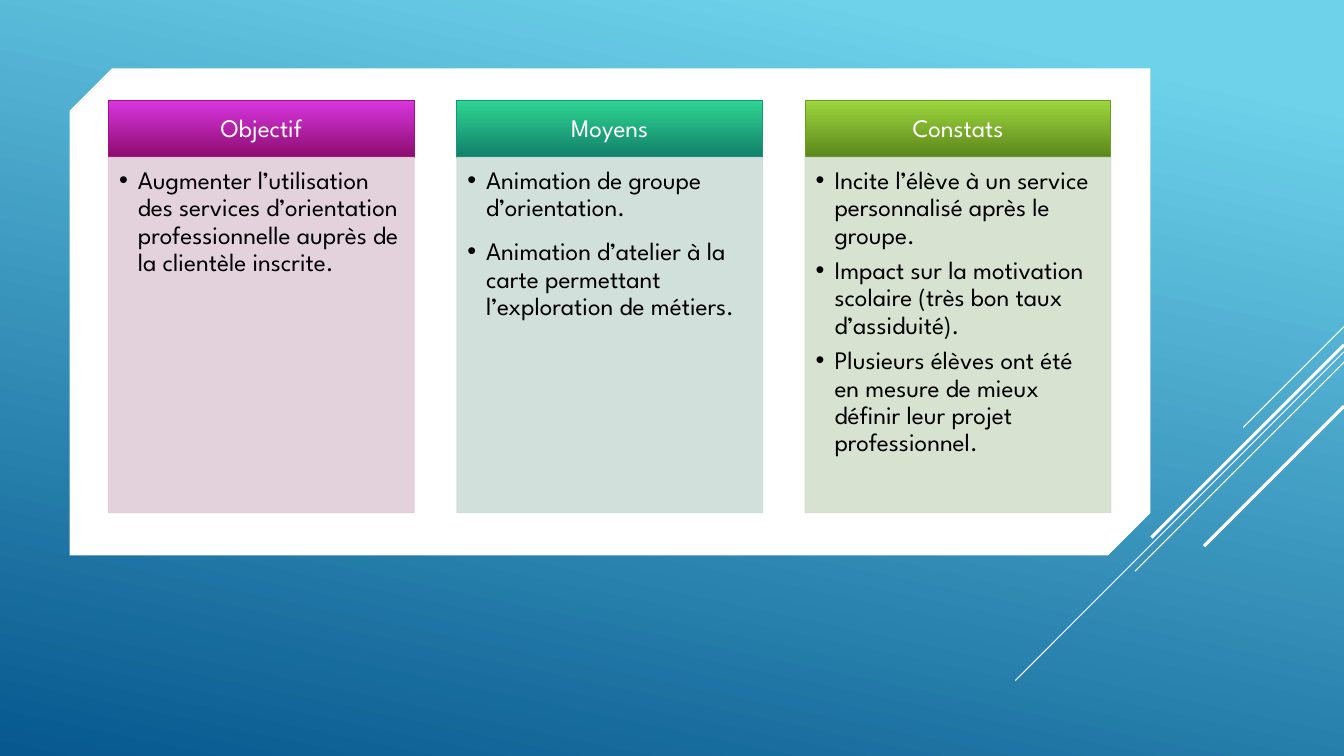
from dataclasses import dataclass

from lxml.etree import SubElement
from pptx import Presentation
from pptx.dml.color import RGBColor
from pptx.enum.shapes import MSO_CONNECTOR as Connector, MSO_SHAPE as Shape
from pptx.enum.text import MSO_ANCHOR as Anchor, MSO_AUTO_SIZE as AutoSize, PP_ALIGN as Align
from pptx.oxml.ns import qn
from pptx.util import Pt


@dataclass(frozen=True)
class Theme:
    font: str = "League Spartan"
    text_size: float = 18
    line_spacing: float = 0.9
    outline: float = 0.75
    white: str = "FFFFFF"
    black: str = "000000"
    sky: tuple = ("6ED2EB", "06588E")
    magenta: tuple = ("D835DF", "8D0C6F", "A50E82", "E1CCD8")
    teal: tuple = ("2ED592", "11806A", "14967C", "CCDDD7")
    green: tuple = ("9DD63D", "5B871B", "6A9E1F", "D4DFCD")


class SlideBuilder:
    def __init__(self, page, theme):
        self.page = page
        self.theme = theme

    def gradient(self, fill, colours, angle, start=0):
        fill.gradient()
        fill.gradient_angle = 360 - angle
        for stop, colour, position in zip(fill.gradient_stops, colours, (start, 1)):
            stop.color.rgb = RGBColor.from_string(colour)
            stop.position = position

    def solid(self, fill, colour, opacity=None):
        fill.solid()
        fill.fore_color.rgb = RGBColor.from_string(colour)
        if opacity:
            for element in fill._xPr.iter(qn("a:srgbClr")):
                SubElement(element, qn("a:alpha"), val=str(opacity * 1000))

    def background(self):
        self.gradient(self.page.background.fill, self.theme.sky, 102, 0.1)

    def panel(self, left, top, width, height, snip):
        box = self.page.shapes.add_shape(
            Shape.SNIP_2_DIAG_RECTANGLE, Pt(left), Pt(top), Pt(width), Pt(height))
        box.shadow.inherit = False
        box.adjustments[0] = snip
        box.adjustments[1] = 0
        self.solid(box.fill, self.theme.white)
        box.line.fill.background()

    def diagonal(self, top, length, weight, right=960):
        line = self.page.shapes.add_connector(
            Connector.STRAIGHT, Pt(right), Pt(top), Pt(right - length), Pt(top + length))
        self.solid(line.line.fill, self.theme.white)
        line.line.width = Pt(weight)
        SubElement(line.element.spPr, qn("a:effectLst"))

    def frame(self, box, insets, anchor):
        frame = box.text_frame
        frame.word_wrap = True
        frame.auto_size = AutoSize.NONE
        frame.vertical_anchor = anchor
        (frame.margin_left, frame.margin_top,
         frame.margin_right, frame.margin_bottom) = map(Pt, insets)
        return frame

    def format_paragraph(self, para, colour, align, gap=0):
        para.alignment = align
        para.line_spacing = self.theme.line_spacing
        para.space_before = Pt(0)
        para.space_after = Pt(gap)
        for span in para.runs:
            span.font.name = self.theme.font
            span.font.size = Pt(self.theme.text_size)
            span.font.bold = False
            span.font.color.rgb = RGBColor.from_string(colour)

    def heading(self, text, colours, left, top, width, height):
        box = self.page.shapes.add_shape(
            Shape.RECTANGLE, Pt(left), Pt(top), Pt(width), Pt(height))
        box.shadow.inherit = False
        self.gradient(box.fill, colours[:2], 90)
        self.solid(box.line.fill, colours[2])
        box.line.width = Pt(self.theme.outline)
        frame = self.frame(box, (10, 5.7, 10, 5.7), Anchor.MIDDLE)
        frame.text = text
        self.format_paragraph(frame.paragraphs[0], self.theme.white, Align.CENTER)

    def bullet_list(self, box, items, colour, gap, left, top, width, height):
        box.left, box.top, box.width, box.height = map(Pt, (left, top, width, height))
        box.element.getparent().append(box.element)
        self.solid(box.fill, colour, 90)
        self.solid(box.line.fill, colour, 90)
        box.line.width = Pt(self.theme.outline)
        frame = self.frame(box, (7.5, 7.5, 10, 11.3), Anchor.TOP)
        frame.text = "\n".join(items)
        for para in frame.paragraphs:
            self.format_paragraph(para, self.theme.black, Align.LEFT, gap)
            properties = para._p.get_or_add_pPr()
            properties.set("marL", str(Pt(13.5)))
            properties.set("indent", str(Pt(-13.5)))
            SubElement(properties, qn("a:buFont"), typeface="Arial")
            SubElement(properties, qn("a:buChar"), char="•")


def main():
    theme = Theme()
    deck = Presentation()
    deck.slide_width, deck.slide_height = Pt(960), Pt(540)
    page = deck.slides.add_slide(deck.slide_layouts.get_by_name("Comparison"))
    title, *bodies, spare = page.placeholders
    for empty in (title, spare):
        empty.element.getparent().remove(empty.element)

    builder = SlideBuilder(page, theme)
    builder.background()
    builder.panel(49.8, 48.9, 772, 347.8, 0.087)
    for top, length, weight in (
        (233.3, 72, 0.75), (251.3, 234.7, 0.75), (258.7, 149.3, 0.75),
        (246.3, 137.6, 2.25), (290.1, 100, 2.25),
    ):
        builder.diagonal(top, length, weight)

    columns = (
        ("Objectif", theme.magenta, 0, (
            "Augmenter l’utilisation des services d’orientation professionnelle "
            "auprès de la clientèle inscrite.",
        )),
        ("Moyens", theme.teal, 12, (
            "Animation de groupe d’orientation.",
            "Animation d’atelier à la carte permettant l’exploration de métiers.",
        )),
        ("Constats", theme.green, 6, (
            "Incite l’élève à un service personnalisé après le groupe.",
            "Impact sur la motivation scolaire (très bon taux d’assiduité).",
            "Plusieurs élèves ont été en mesure de mieux définir leur projet professionnel.",
        )),
    )
    first_left, pitch, width = 77.5, 248.8, 218.4
    top, heading_height, list_height = 71.8, 40.6, 253.8
    for index, (column, body) in enumerate(zip(columns, bodies)):
        name, colours, gap, items = column
        left = first_left + index * pitch
        builder.heading(name, colours, left, top, width, heading_height)
        builder.bullet_list(body, items, colours[3], gap,
                            left, top + heading_height, width, list_height)
    deck.save("out.pptx")


if __name__ == "__main__":
    main()
